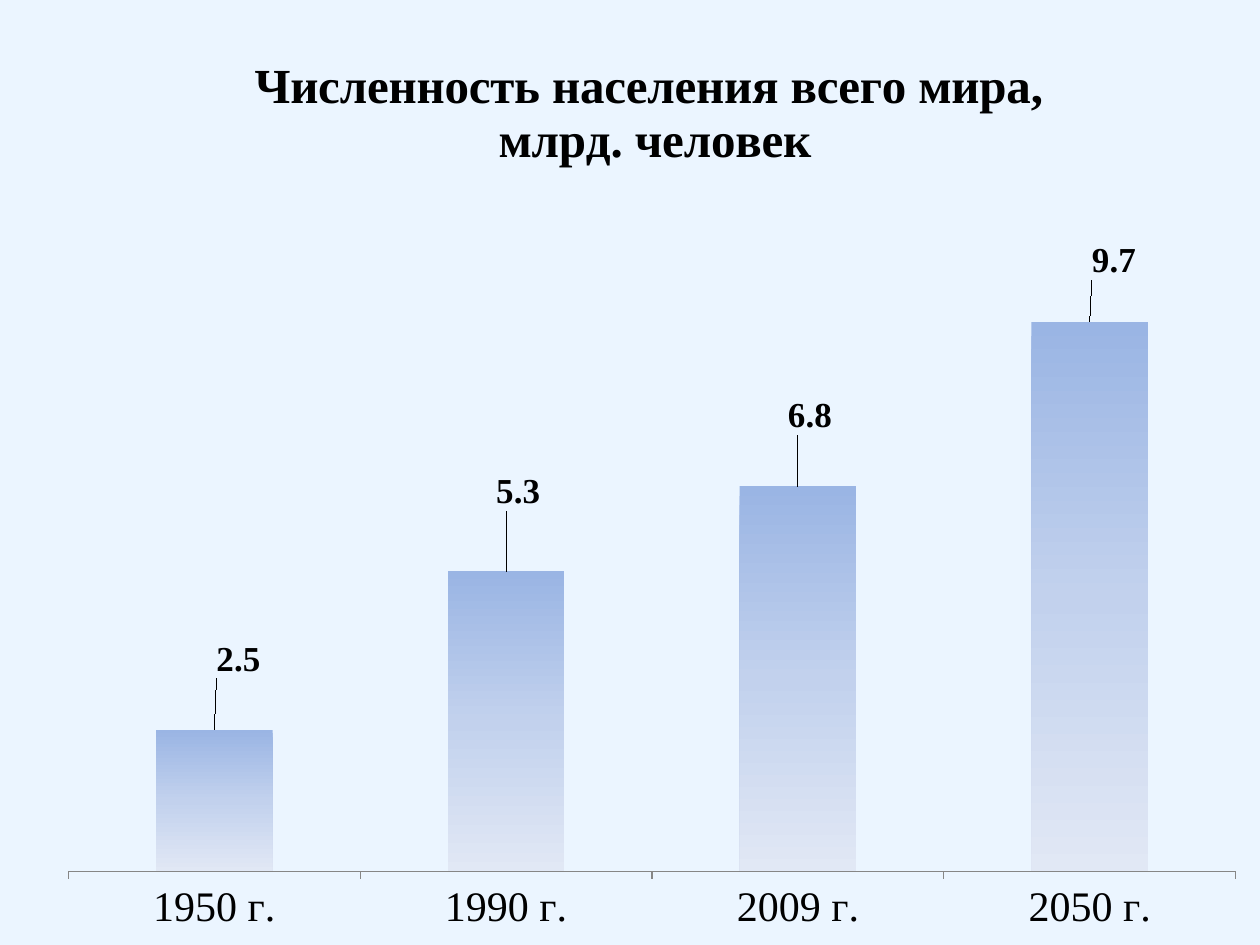
from lxml import etree
from pptx import Presentation
from pptx.chart.data import CategoryChartData
from pptx.dml.color import RGBColor
from pptx.enum.chart import XL_CHART_TYPE, XL_LABEL_POSITION, XL_TICK_MARK
from pptx.oxml import parse_xml
from pptx.oxml.ns import nsdecls, qn
from pptx.util import Inches, Pt

COLUMNS = XL_CHART_TYPE.COLUMN_CLUSTERED
OUTSIDE_END = XL_LABEL_POSITION.OUTSIDE_END
TICK_OUTSIDE = XL_TICK_MARK.OUTSIDE

COLORS = {"background": "EBF5FF", "text": "000000", "axis": "868686"}
BAR_STOPS = [(0, "9AB5E4"), (50, "C2D1ED"), (100, "E1E8F5")]

TITLE = ["Численность населения всего мира, ", "млрд. человек"]
POPULATION = {"1950 г.": 2.5, "1990 г.": 5.3, "2009 г.": 6.8, "2050 г.": 9.7}
# Label shifts as fractions of the chart size
LABEL_SHIFTS = [(0.02, -0.05), (0.01, -0.06), (0.01, -0.05), (0.02, -0.04)]


def manual_layout(**settings):
    """Return a c:layout element with the given manual settings."""
    layout = parse_xml(f"<c:layout {nsdecls('c')}><c:manualLayout/></c:layout>")
    for name, value in settings.items():
        etree.SubElement(layout[0], qn(f"c:{name}")).set("val", str(value))
    return layout


class SlideBuilder:
    font_name = "Times New Roman"

    def __init__(self, deck):
        self.page = deck.slides.add_slide(deck.slide_layouts[6])

    def style_font(self, font, size, bold=False):
        font.name, font.size, font.bold = self.font_name, Pt(size), bold
        font.color.rgb = RGBColor.from_string(COLORS["text"])

    def background(self, color):
        fill = self.page.background.fill
        fill.solid()
        fill.fore_color.rgb = RGBColor.from_string(color)

    def column_chart(self, values, left, top, width, height):
        data = CategoryChartData()
        data.categories = list(values)
        data.add_series("Население", list(values.values()))
        chart = self.page.shapes.add_chart(
            COLUMNS, Inches(left), Inches(top), Inches(width), Inches(height), data
        ).chart
        chart.has_legend = False
        chart.font.name, chart.font.size = "Calibri", Pt(10)
        chart.plots[0].gap_width = 150
        chart.plots[0].vary_by_categories = False
        plot_area = chart.plots[0]._element.getparent()
        for old in plot_area.findall(qn("c:layout")):
            plot_area.remove(old)
        plot_area.insert(0, manual_layout(
            layoutTarget="inner", xMode="edge", yMode="edge",
            x=0.02, y=0.18, w=0.96, h=0.74))
        return chart

    def chart_title(self, chart, lines):
        frame = chart.chart_title.text_frame
        for number, line in enumerate(lines):
            para = frame.add_paragraph() if number else frame.paragraphs[0]
            para.text = line
            self.style_font(para.font, 28, bold=True)
        title = chart.chart_title._element
        for old in title.findall(qn("c:layout")):
            title.remove(old)
        title.find(qn("c:tx")).addnext(
            manual_layout(xMode="edge", yMode="edge", x=0.17, y=0.03))

    def axes(self, chart):
        category = chart.category_axis
        category.major_tick_mark = TICK_OUTSIDE
        category.format.line.color.rgb = RGBColor.from_string(COLORS["axis"])
        self.style_font(category.tick_labels.font, 24)
        value = chart.value_axis
        value.minimum_scale, value.maximum_scale = 0, 12
        value.has_major_gridlines = False
        value.visible = False

    def gradient_bars(self, series, stops):
        series.format.fill.gradient()
        gradient = series._element.find(qn("c:spPr")).find(qn("a:gradFill"))
        marks = "".join(
            f'<a:gs pos="{place * 1000}"><a:srgbClr val="{color}"/></a:gs>'
            for place, color in stops)
        gradient.getparent().replace(gradient, parse_xml(
            f'<a:gradFill {nsdecls("a")} rotWithShape="1"><a:gsLst>{marks}</a:gsLst>'
            '<a:lin ang="5400000" scaled="0"/></a:gradFill>'))

    def value_labels(self, series, shifts):
        labels = series.data_labels
        labels.show_value = True
        self.style_font(labels.font, 20, bold=True)
        for number in range(len(shifts)):
            label = series.points[number].data_label
            self.style_font(label.font, 20, bold=True)
            label.position = OUTSIDE_END
        marks = series._element.iter(qn("c:dLbl"))
        for mark, (x, y) in zip(marks, shifts):
            mark.find(qn("c:idx")).addnext(manual_layout(x=x, y=y))


def main():
    deck = Presentation()
    deck.slide_width, deck.slide_height = Inches(10), Inches(7.5)
    builder = SlideBuilder(deck)
    builder.background(COLORS["background"])

    # Population chart
    chart = builder.column_chart(POPULATION, 0.35, 0.21, 9.65, 7.29)
    builder.chart_title(chart, TITLE)
    builder.axes(chart)

    # Bars and their values
    series = chart.plots[0].series[0]
    builder.gradient_bars(series, BAR_STOPS)
    builder.value_labels(series, LABEL_SHIFTS)

    deck.save("out.pptx")


if __name__ == "__main__":
    main()
